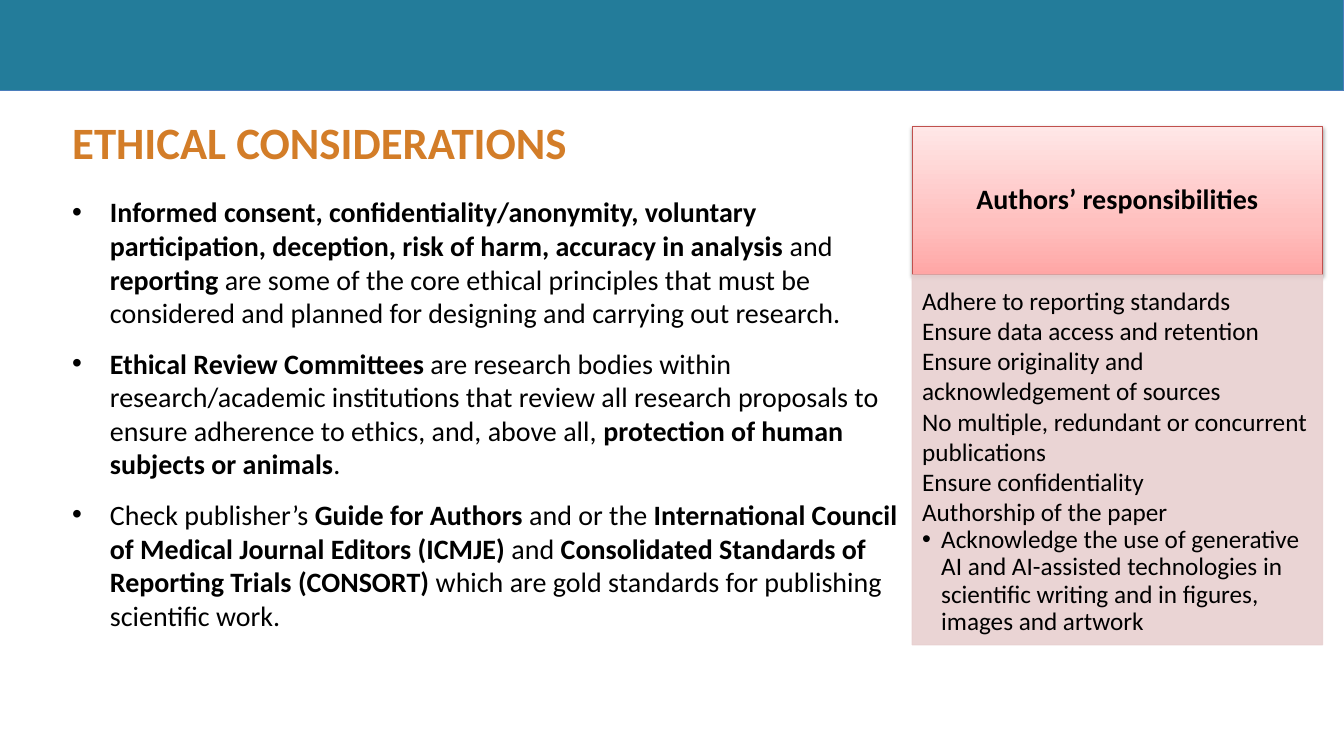
"""Build a slide on ethical considerations and the responsibilities of authors."""
from lxml import etree
from pptx import Presentation
from pptx import util as u
from pptx.dml.color import RGBColor
from pptx.enum import shapes, text
from pptx.oxml import ns

PRINCIPLES = [
    [("Informed consent, confidentiality/anonymity, voluntary participation, deception, "
      "risk of harm, accuracy in analysis ", True),
     ("and", False), (" reporting", True),
     (" are some of the core ethical principles that must be considered and planned for "
      "designing and carrying out research.", False)],
    [("Ethical Review Committees", True),
     (" are research bodies within research/academic institutions that review all research "
      "proposals to ensure adherence to ethics, and, above all, ", False),
     ("protection of human subjects or animals", True), (".", False)],
    [("Check publisher’s ", False), ("Guide for Authors ", True), ("and or the ", False),
     ("International Council of Medical Journal Editors (ICMJE) ", True), ("and ", False),
     ("Consolidated Standards of Reporting Trials (CONSORT) ", True),
     ("which are gold standards for publishing scientific work.", False)],
]
DUTIES = [
    "Adhere to reporting standards",
    "Ensure data access and retention",
    "Ensure originality and acknowledgement of sources",
    "No multiple, redundant or concurrent publications",
    "Ensure confidentiality",
    "Authorship of the paper",
    "Acknowledge the use of generative AI and AI-assisted technologies in scientific writing "
    "and in figures, images and artwork",
]
PANEL_LEFT, PANEL_WIDTH = 22.99, 10.34


def rgb(value):
    return RGBColor.from_string(value)


def sub(parent, tag, **attrs):
    return etree.SubElement(parent, ns.qn(tag), attrs)


def style(p, size, color="000000", bold=False):
    for r in p.runs:
        r.font.name, r.font.size = "Calibri", u.Pt(size)
        r.font.bold, r.font.color.rgb = bold, rgb(color)


def bullet(p, indent):
    pPr = p._p.get_or_add_pPr()
    pPr.set("marL", str(u.Cm(indent)))
    pPr.set("indent", str(-u.Cm(indent)))
    sub(pPr, "a:buFont", typeface="Arial")
    sub(pPr, "a:buChar", char="•")


def set_frame(sp, insets, anchor=text.MSO_ANCHOR.TOP):
    tf = sp.text_frame
    tf.word_wrap, tf.auto_size, tf.vertical_anchor = True, text.MSO_AUTO_SIZE.NONE, anchor
    tf.margin_left, tf.margin_top, tf.margin_right, tf.margin_bottom = map(u.Cm, insets)
    return tf


def add_box(s, left, top, width, height, fill, line):
    sp = s.shapes.add_shape(shapes.MSO_SHAPE.RECTANGLE, *map(u.Cm, (left, top, width, height)))
    sp.shadow.inherit = False
    sp.fill.solid()
    sp.fill.fore_color.rgb = rgb(fill)
    sp.line.color.rgb = rgb(line)
    sp.line.width = u.Pt(0.75)
    return sp


def set_gradient(sp, stops):
    sp.fill.gradient()
    sp.fill.gradient_angle = 90
    gs_list = sp._element.spPr.find(".//" + ns.qn("a:gsLst"))
    gs_list.clear()
    for pos, color in stops:
        sub(sub(gs_list, "a:gs", pos=str(pos * 1000)), "a:srgbClr", val=color)


def add_shadow(sp):
    effects = sp._element.spPr.find(ns.qn("a:effectLst"))
    shadow = sub(effects, "a:outerShdw", blurRad=str(u.Pt(3.1)), dist=str(u.Pt(1.6)),
                 dir="5400000", rotWithShape="0")
    sub(sub(shadow, "a:srgbClr", val="000000"), "a:alpha", val="38000")


def set_title(s, title):
    sp = s.shapes.title
    sp.left, sp.top, sp.width, sp.height = map(u.Cm, (1.57, 2.77, 22.05, 2.01))
    tf = set_frame(sp, (0.25, 0.13, 0.25, 0))
    tf.text = title
    tf.paragraphs[0].alignment = text.PP_ALIGN.LEFT
    style(tf.paragraphs[0], 32, "D37D28", True)


def add_principles(s):
    sp = s.shapes.add_textbox(*map(u.Cm, (1.57, 4.78, 21.41, 11.79)))
    tf = set_frame(sp, (0.25, 0.13, 0.25, 0.13))
    for i, parts in enumerate(PRINCIPLES):
        p = tf.add_paragraph() if i else tf.paragraphs[0]
        p.space_before, p.space_after = u.Pt(6 if i else 0), u.Pt(6)
        bullet(p, 0.95)
        for words, bold in parts:
            p.add_run().text = words
        style(p, 20)
        for r, (_, bold) in zip(p.runs, parts):
            r.font.bold = bold


def add_panel_header(s, heading):
    sp = add_box(s, PANEL_LEFT, 3.18, PANEL_WIDTH, 3.75, "FFC0BF", "C0504D")
    set_gradient(sp, [(0, "FFA6A5"), (35, "FFC0BF"), (100, "FFE7E7")])
    add_shadow(sp)
    tf = set_frame(sp, (0.41, 0.23, 0.41, 0.23), text.MSO_ANCHOR.MIDDLE)
    tf.text = heading
    p = tf.paragraphs[0]
    p.alignment, p.line_spacing = text.PP_ALIGN.CENTER, 0.9
    style(p, 20, bold=True)


def add_duties(s):
    sp = add_box(s, PANEL_LEFT, 6.93, PANEL_WIDTH, 9.32, "E8D0D0", "E8D0D0")
    for color in sp._element.spPr.iter(ns.qn("a:srgbClr")):
        sub(color, "a:alpha", val="90000")
    tf = set_frame(sp, (0.25, 0.25, 0.36, 0.41))
    tf.text = "\n".join(DUTIES)
    for p in tf.paragraphs:
        p.alignment = text.PP_ALIGN.LEFT
        style(p, 18)
    last = tf.paragraphs[-1]
    last.line_spacing = 0.9
    bullet(last, 0.48)


def main():
    prs = Presentation()
    prs.slide_width, prs.slide_height = u.Cm(33.87), u.Cm(19.05)
    s = prs.slides.add_slide(prs.slide_layouts[5])
    add_box(s, 0, 0, 33.87, 2.29, "237C9A", "4B7EBC")
    set_title(s, "ETHICAL CONSIDERATIONS")
    add_principles(s)
    add_panel_header(s, "Authors’ responsibilities")
    add_duties(s)
    prs.save("out.pptx")


if __name__ == "__main__":
    main()
